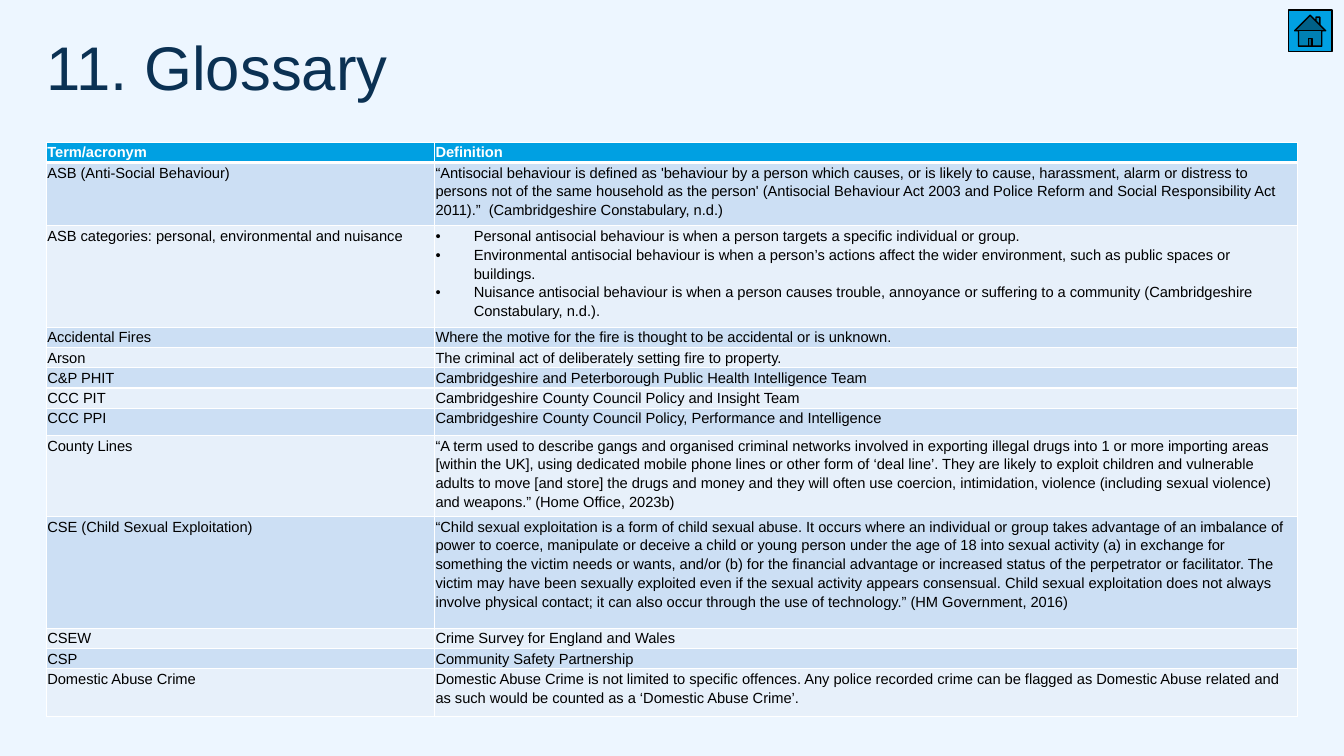
from lxml.etree import SubElement
from pptx import Presentation
from pptx.dml.color import RGBColor
from pptx.enum.shapes import MSO_SHAPE
from pptx.enum.text import MSO_ANCHOR
from pptx.oxml.ns import qn
from pptx.util import Inches, Pt

COLORS = {
    "background": "EDF6FF", "title": "0B3153", "header": "00A0E2",
    "dark_band": "CCDFF4", "light_band": "E7F0FA",
    "white": "FFFFFF", "black": "000000",
}
FONT = "Arial"
TITLE = "11. Glossary"

# Term, definition (a list becomes bullets), row height in inches
GLOSSARY = [
    ("Term/acronym", "Definition", 0.15),
    ("ASB (Anti-Social Behaviour)",
     "“Antisocial behaviour is defined as 'behaviour by a person which causes, or is likely to "
     "cause, harassment, alarm or distress to persons not of the same household as the person' "
     "(Antisocial Behaviour Act 2003 and Police Reform and Social Responsibility Act 2011).”  "
     "(Cambridgeshire Constabulary, n.d.)", 0.63),
    ("ASB categories: personal, environmental and nuisance",
     ["Personal antisocial behaviour is when a person targets a specific individual or group.",
      "Environmental antisocial behaviour is when a person’s actions affect the wider "
      "environment, such as public spaces or buildings.",
      "Nuisance antisocial behaviour is when a person causes trouble, annoyance or suffering "
      "to a community (Cambridgeshire Constabulary, n.d.)."], 0.79),
    ("Accidental Fires",
     "Where the motive for the fire is thought to be accidental or is unknown.", 0.15),
    ("Arson", "The criminal act of deliberately setting fire to property.", 0.15),
    ("C&P PHIT", "Cambridgeshire and Peterborough Public Health Intelligence Team", 0.15),
    ("CCC PIT", "Cambridgeshire County Council Policy and Insight Team", 0.15),
    ("CCC PPI", "Cambridgeshire County Council Policy, Performance and Intelligence", 0.27),
    ("County Lines",
     "“A term used to describe gangs and organised criminal networks involved in exporting "
     "illegal drugs into 1 or more importing areas [within the UK], using dedicated mobile phone "
     "lines or other form of ‘deal line’. They are likely to exploit children and vulnerable "
     "adults to move [and store] the drugs and money and they will often use coercion, "
     "intimidation, violence (including sexual violence) and weapons.” (Home Office, 2023b)",
     0.79),
    ("CSE (Child Sexual Exploitation)",
     "“Child sexual exploitation is a form of child sexual abuse. It occurs where an individual "
     "or group takes advantage of an imbalance of power to coerce, manipulate or deceive a child "
     "or young person under the age of 18 into sexual activity (a) in exchange for something the "
     "victim needs or wants, and/or (b) for the financial advantage or increased status of the "
     "perpetrator or facilitator. The victim may have been sexually exploited even if the sexual "
     "activity appears consensual. Child sexual exploitation does not always involve physical "
     "contact; it can also occur through the use of technology.” (HM Government, 2016)", 1.11),
    ("CSEW", "Crime Survey for England and Wales", 0.15),
    ("CSP", "Community Safety Partnership", 0.15),
    ("Domestic Abuse Crime",
     "Domestic Abuse Crime is not limited to specific offences. Any police recorded crime can be "
     "flagged as Domestic Abuse related and as such would be counted as a ‘Domestic Abuse "
     "Crime’.", 0.47),
]
COLUMN_WIDTHS = (3.85, 8.56)
LEFT, TABLE_TOP = 0.46, 1.41
BULLET_INDENT = Inches(0.38)


def color(name):
    return RGBColor.from_string(COLORS[name])


def style_font(font, size, color_name, bold=False):
    font.name, font.size, font.bold = FONT, Pt(size), bold
    font.color.rgb = color(color_name)


def add_borders(cell, row_number):
    properties = cell._tc.get_or_add_tcPr()
    for side in "LRTB":
        # A heavier rule separates the header from the body
        heavy = (row_number, side) in ((0, "B"), (1, "T"))
        line = SubElement(properties, qn(f"a:ln{side}"), w=str(Pt(3 if heavy else 1)))
        fill = SubElement(line, qn("a:solidFill"))
        SubElement(fill, qn("a:srgbClr"), val=COLORS["white"])


def add_bullet(paragraph):
    properties = paragraph._p.get_or_add_pPr()
    properties.set("marL", str(BULLET_INDENT))
    properties.set("indent", str(-BULLET_INDENT))
    SubElement(properties, qn("a:buFont"), typeface=FONT)
    SubElement(properties, qn("a:buChar"), char="•")


def fill_cell(cell, content, row_number):
    is_header = row_number == 0
    bulleted = isinstance(content, list)
    cell.margin_left = cell.margin_right = Inches(0.01)
    cell.margin_top = cell.margin_bottom = 0
    cell.text_frame.text = "\n".join(content) if bulleted else content
    paragraphs = cell.text_frame.paragraphs
    for paragraph in paragraphs:
        if bulleted:
            add_bullet(paragraph)
        paragraph.line_spacing = 1.15
        paragraph.space_after = Pt(10 if paragraph is paragraphs[-1] else 0)
        style_font(paragraph.runs[0].font, 10.5, "white" if is_header else "black", is_header)
    add_borders(cell, row_number)
    band = "dark_band" if row_number % 2 else "light_band"
    cell.fill.solid()
    cell.fill.fore_color.rgb = color("header" if is_header else band)


def main():
    presentation = Presentation()
    presentation.slide_width, presentation.slide_height = Inches(13.33), Inches(7.5)
    slide = presentation.slides.add_slide(presentation.slide_layouts[6])
    slide.background.fill.solid()
    slide.background.fill.fore_color.rgb = color("background")

    # Title
    title = slide.shapes.add_textbox(Inches(LEFT), Inches(0.37), Inches(11.5), Inches(1.33))
    frame = title.text_frame
    frame.word_wrap = True
    frame.vertical_anchor = MSO_ANCHOR.TOP
    frame.margin_left = frame.margin_right = frame.margin_top = frame.margin_bottom = 0
    frame.text = TITLE
    frame.paragraphs[0].line_spacing = 0.9
    style_font(frame.paragraphs[0].runs[0].font, 44, "title")

    # Glossary table
    table = slide.shapes.add_table(
        len(GLOSSARY), len(COLUMN_WIDTHS), Inches(LEFT), Inches(TABLE_TOP),
        Inches(sum(COLUMN_WIDTHS)), Inches(sum(row[2] for row in GLOSSARY))).table
    for column, width in zip(table.columns, COLUMN_WIDTHS):
        column.width = Inches(width)
    for row_number, (term, definition, height) in enumerate(GLOSSARY):
        table.rows[row_number].height = Inches(height)
        for column_number, content in enumerate((term, definition)):
            fill_cell(table.cell(row_number, column_number), content, row_number)

    # Home button
    home = slide.shapes.add_shape(MSO_SHAPE.ACTION_BUTTON_HOME, Inches(12.78), Inches(0.1),
                                  Inches(0.43), Inches(0.41))
    home.shadow.inherit = False
    home.fill.solid()
    home.fill.fore_color.rgb = color("header")
    home.line.color.rgb = color("black")
    home.line.width = Pt(1)

    presentation.save("out.pptx")


if __name__ == "__main__":
    main()
